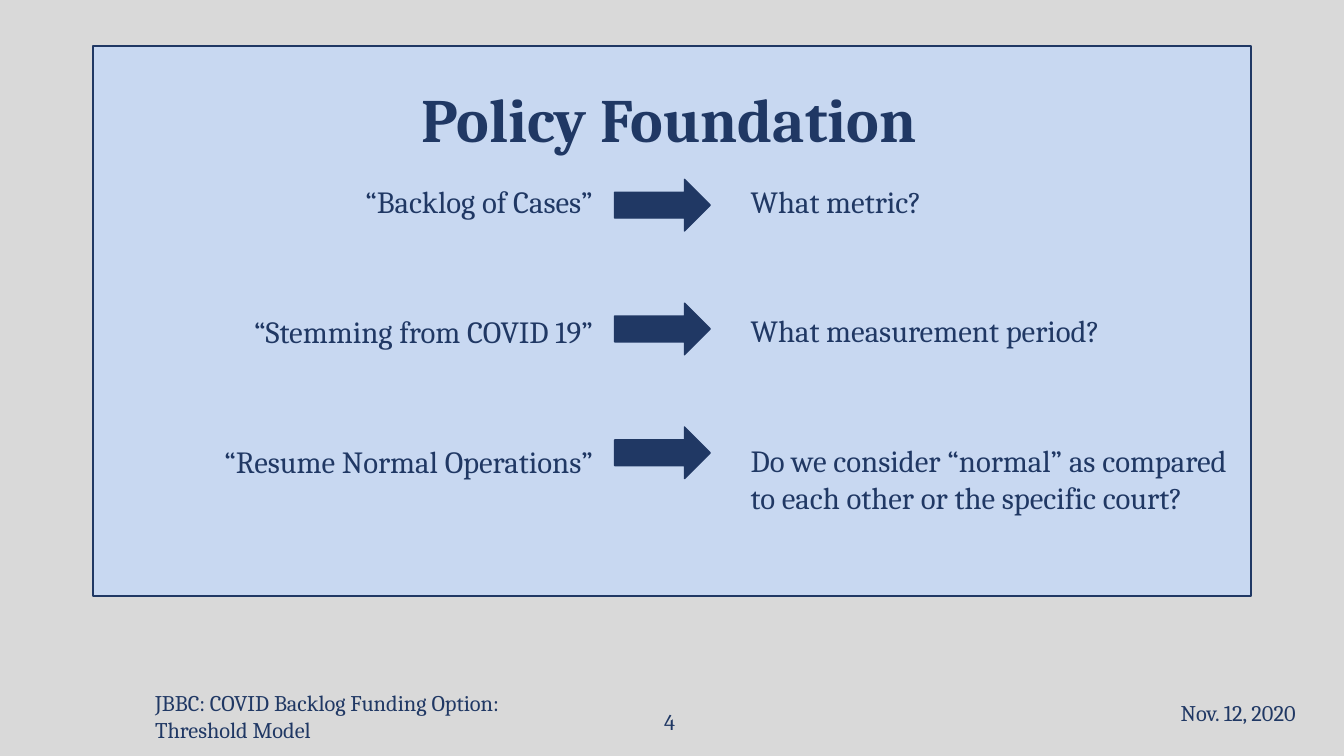
from pptx import Presentation
from pptx.dml.color import RGBColor
from pptx.enum.shapes import MSO_SHAPE as Kind
from pptx.enum.text import MSO_ANCHOR as Anchor, MSO_AUTO_SIZE as Auto, PP_ALIGN as Align
from pptx.util import Cm, Pt

NAVY = RGBColor(0x20, 0x38, 0x64)
BLUE = RGBColor(0xC8, 0xD8, 0xF1)
GREY = RGBColor(0xD9, 0xD9, 0xD9)
FONT = "Cambria"

TITLE = "Policy Foundation"
PAIRS = [
    ("“Backlog of Cases”", "What metric?"),
    ("“Stemming from COVID 19”", "What measurement period?"),
    ("“Resume Normal Operations”",
     "Do we consider “normal” as compared to each other or the specific court?"),
]
FOOTER = "JBBC: COVID Backlog Funding Option: Threshold Model"
NUMBER = "4"
DATE = "Nov. 12, 2020"

PANEL = (2.34, 1.17, 29.18, 13.84)
HEAD = (7.34, 1.52, 19.05, 2.54)
TERMS = (2.34, 4.49, 12.85, 10.31)
ASKS = (18.67, 4.47, 12.85, 8.69)
ARROW = (15.49, 4.52, 2.41, 1.3)
STEP = 3.12
GAP = 66.4


def place(box):
    return [Cm(x) for x in box]


def write(shape, lines, size=16, bold=False, align=Align.LEFT,
          anchor=Anchor.MIDDLE, after=0, space=1.0):
    frame = shape.text_frame
    frame.word_wrap = True
    frame.auto_size = Auto.NONE
    frame.vertical_anchor = anchor
    frame.text = "\n".join(lines)
    for para in frame.paragraphs:
        para.alignment = align
        para.line_spacing = space
        para.space_before = Pt(0)
        para.space_after = Pt(after)
        font = para.runs[0].font
        font.name, font.size, font.bold = FONT, Pt(size), bold
        font.color.rgb = NAVY


def draw(slide, kind, box, fill, line=None, width=1):
    shape = slide.shapes.add_shape(kind, *place(box))
    shape.shadow.inherit = False
    shape.fill.solid()
    shape.fill.fore_color.rgb = fill
    if line is None:
        shape.line.fill.background()
    else:
        shape.line.color.rgb = line
        shape.line.width = Pt(width)
    return shape


def label(slide, box, lines, **style):
    write(slide.shapes.add_textbox(*place(box)), lines, **style)


def main():
    deck = Presentation()
    deck.slide_width, deck.slide_height = Cm(33.87), Cm(19.05)
    slide = deck.slides.add_slide(deck.slide_layouts[5])
    slide.background.fill.solid()
    slide.background.fill.fore_color.rgb = GREY

    panel = draw(slide, Kind.RECTANGLE, PANEL, BLUE, NAVY, 1.5)
    title = slide.shapes.title
    title.element.addprevious(panel.element)
    title.left, title.top, title.width, title.height = place(HEAD)
    write(title, [TITLE], size=44, bold=True, align=Align.CENTER,
          anchor=Anchor.BOTTOM, space=0.9)

    left, top, width, height = ARROW
    for row in range(len(PAIRS)):
        draw(slide, Kind.RIGHT_ARROW, (left, top + row * STEP, width, height), NAVY, NAVY)

    terms, asks = zip(*PAIRS)
    body = dict(size=22, anchor=Anchor.TOP, after=GAP)
    label(slide, TERMS, terms, align=Align.RIGHT, **body)
    label(slide, ASKS, asks, **body)

    label(slide, (3.66, 17.65, 10.69, 0.79), [FOOTER])
    badge = draw(slide, Kind.RECTANGLE, (16.2, 17.68, 1.35, 1.02), GREY)
    write(badge, [NUMBER], align=Align.CENTER)
    label(slide, (29.01, 17.45, 4.39, 1.02), [DATE], align=Align.CENTER)
    deck.save("out.pptx")


if __name__ == "__main__":
    main()
